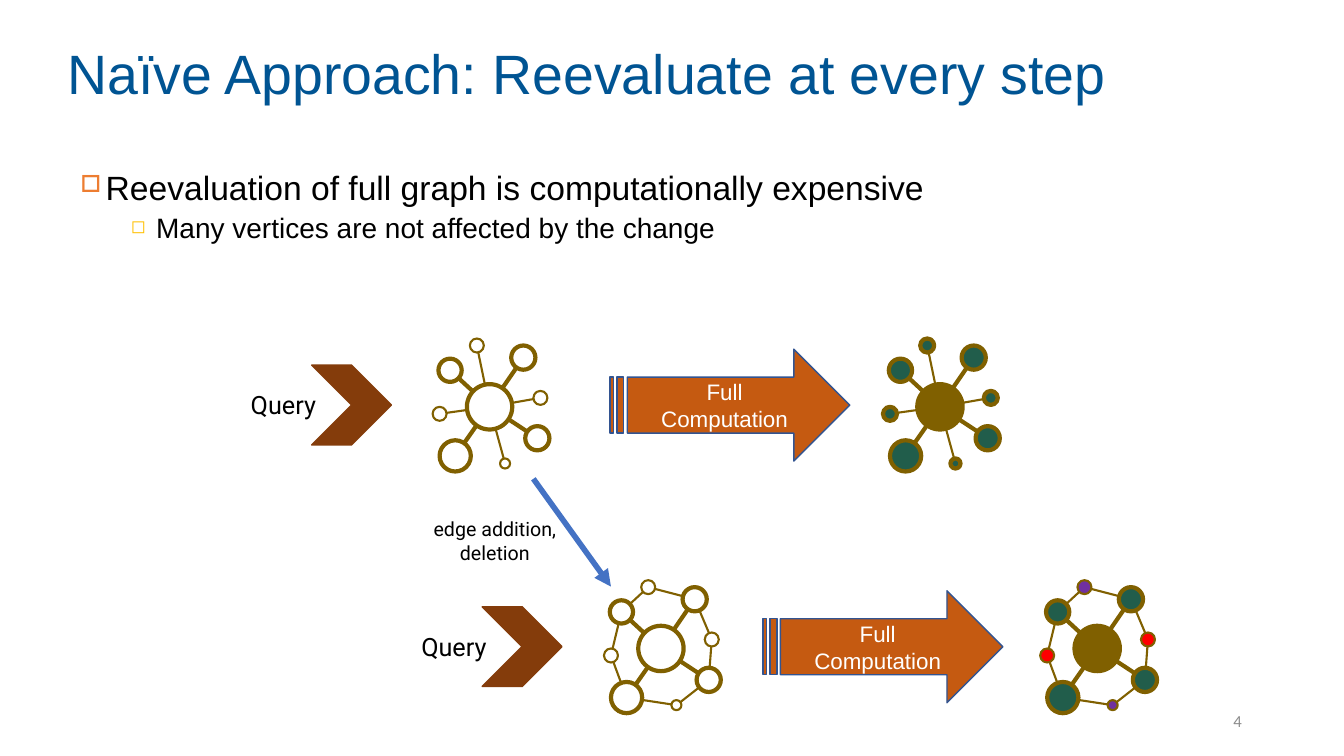
from lxml.etree import SubElement
from pptx import Presentation
from pptx.dml.color import RGBColor
from pptx.enum.shapes import MSO_CONNECTOR, MSO_SHAPE
from pptx.enum.text import MSO_ANCHOR, MSO_AUTO_SIZE, PP_ALIGN
from pptx.oxml.ns import qn
from pptx.util import Pt

NAVY = RGBColor(0x00, 0x54, 0x93)
BLACK = RGBColor(0x00, 0x00, 0x00)
WHITE = RGBColor(0xFF, 0xFF, 0xFF)
GRAY = RGBColor(0x8C, 0x8C, 0x8C)
OLIVE = RGBColor(0x80, 0x60, 0x00)
GREEN = RGBColor(0x21, 0x5D, 0x4B)
PURPLE = RGBColor(0x70, 0x30, 0xA0)
RED = RGBColor(0xFF, 0x00, 0x00)
RUST = RGBColor(0xC5, 0x5A, 0x11)
BROWN = RGBColor(0x84, 0x3C, 0x0B)
STEEL = RGBColor(0x32, 0x54, 0x91)
BLUE = RGBColor(0x44, 0x72, 0xC4)
ORANGE = RGBColor(0xED, 0x7D, 0x31)
GOLD = RGBColor(0xFF, 0xC0, 0x00)

THIN, THICK = 1.5, 3
# Node name: left, top and diameter within a graph's box, in points
NODES = {
    "hub": (24.5, 32.6, 32.4),
    "se": (66.2, 62.6, 17.3),
    "n": (26.6, 0, 10),
    "nw": (4.2, 14.4, 16.6),
    "ne": (56.2, 5, 17.3),
    "sw": (5, 72.7, 22.3),
    "w": (0, 48.8, 10),
    "e": (72, 37.4, 10),
    "s": (48.2, 85.7, 7.2),
}
LARGE = ("nw", "ne", "se", "sw")
RING = ("n", "ne", "e", "se", "s", "sw", "w", "nw")
STAR = [("hub", name) for name in RING]
WHEEL = list(zip(RING, RING[1:] + RING[:1])) + [("hub", name) for name in LARGE]

BLANK = dict.fromkeys(NODES, WHITE)
DONE = dict.fromkeys(NODES, GREEN) | {"hub": OLIVE}
MIXED = DONE | {"n": PURPLE, "s": PURPLE, "w": RED, "e": RED}


def style(item, **values):
    for name, value in values.items():
        setattr(item, name, value)


def write(frame, lines, font, size, color, align=PP_ALIGN.LEFT, **values):
    style(frame, auto_size=MSO_AUTO_SIZE.NONE, **values)
    for i, line in enumerate(lines):
        para = frame.paragraphs[0] if i == 0 else frame.add_paragraph()
        para.alignment = align
        run = para.add_run()
        run.text = line
        style(run.font, name=font, size=Pt(size))
        run.font.color.rgb = color


def add_box(parent, x, y, w, h):
    return parent.shapes.add_textbox(Pt(x), Pt(y), Pt(w), Pt(h)).text_frame


def add_form(parent, kind, x, y, w, h, fill, color, width):
    form = parent.shapes.add_shape(kind, Pt(x), Pt(y), Pt(w), Pt(h))
    form.shadow.inherit = False
    form.fill.solid()
    form.fill.fore_color.rgb = fill
    form.line.color.rgb = color
    form.line.width = Pt(width)
    return form


def add_line(parent, start, end, color, width):
    ends = [Pt(v) for v in (*start, *end)]
    line = parent.shapes.add_connector(MSO_CONNECTOR.STRAIGHT, *ends)
    line.line.color.rgb = color
    line.line.width = Pt(width)
    SubElement(line._element.spPr, qn("a:effectLst"))
    return line


def add_title(slide, x, y, w, h):
    title = slide.shapes.title
    style(title, left=Pt(x), top=Pt(y), width=Pt(w), height=Pt(h))
    write(title.text_frame, ["Naïve Approach: Reevaluate at every step"],
          "Arial", 39.6, NAVY, vertical_anchor=MSO_ANCHOR.MIDDLE)
    title.text_frame.paragraphs[0].line_spacing = 0.9


def add_bullets(slide, x, y, w, h):
    rows = [
        ("Reevaluation of full graph is computationally expensive", 24, 18, 10, "□", ORANGE, 70),
        ("Many vertices are not affected by the change", 20, 54, 5, "◻", GOLD, 65),
    ]
    frame = add_box(slide, x, y, w, h)
    write(frame, [row[0] for row in rows], "Arial", 24, BLACK, word_wrap=True)
    for level, (para, row) in enumerate(zip(frame.paragraphs, rows)):
        _, size, indent, gap, mark, color, scale = row
        para.runs[0].font.size = Pt(size)
        style(para, level=level, line_spacing=0.9, space_before=Pt(gap))
        props = para._p.get_or_add_pPr()
        props.set("marL", str(Pt(indent)))
        props.set("indent", str(-Pt(18)))
        tint = SubElement(props, qn("a:buClr"))
        SubElement(tint, qn("a:srgbClr"), val=str(color))
        SubElement(props, qn("a:buSzPct"), val=str(scale * 1000))
        SubElement(props, qn("a:buChar"), char=mark)


def add_graph(slide, x, y, edges, fills, small=THIN):
    """Draw edges centre to centre, then the nodes on top of them."""
    group = slide.shapes.add_group_shape()
    mid = {name: (x + dx + d / 2, y + dy + d / 2) for name, (dx, dy, d) in NODES.items()}
    for start, end in edges:
        width = THICK if start == "hub" and end in LARGE else THIN
        add_line(group, mid[start], mid[end], OLIVE, width)
    for name, (dx, dy, d) in NODES.items():
        width = THICK if name == "hub" or name in LARGE else small
        add_form(group, MSO_SHAPE.OVAL, x + dx, y + dy, d, d, fills[name], OLIVE, width)


def add_query(slide, x, y):
    group = slide.shapes.add_group_shape()
    add_form(group, MSO_SHAPE.CHEVRON, x + 50.6, y, 57, 57, BROWN, BROWN, 1)
    write(add_box(group, x, y + 14, 63.4, 29), ["Query"], "Roboto", 18, BLACK, word_wrap=False)


def add_step(slide, x, y):
    arrow = add_form(slide, MSO_SHAPE.STRIPED_RIGHT_ARROW, x, y, 171.4, 80, RUST, STEEL, 1)
    write(arrow.text_frame, ["Full", "Computation"], "Arial", 16, WHITE, PP_ALIGN.CENTER,
          vertical_anchor=MSO_ANCHOR.MIDDLE, word_wrap=True)


def add_change(slide, x, y):
    line = add_line(slide, (x + 80, y), (x + 135.4, y + 77), BLUE, 4)
    SubElement(line.line._get_or_add_ln(), qn("a:tailEnd"), type="triangle")
    write(add_box(slide, x, y + 23.8, 105, 41), ["edge addition,", "deletion"],
          "Roboto", 14, BLACK, PP_ALIGN.CENTER, word_wrap=False)


def add_row(slide, y, query, before, step, after, edges, fills, small):
    """Lay out query, graph, computation and result from left to right."""
    add_graph(slide, before, y, edges, BLANK)
    add_graph(slide, after, y, edges, fills, small)
    add_step(slide, step, y + 7.6)
    add_query(slide, query, y + 19)


def main():
    deck = Presentation()
    style(deck, slide_width=Pt(960), slide_height=Pt(540))
    slide = deck.slides.add_slide(deck.slide_layouts[5])
    add_title(slide, 41, 31.7, 874, 46)
    add_bullets(slide, 50.4, 118.8, 834.5, 165.6)
    add_row(slide, 241.8, 172, 309, 435.6, 630.7, STAR, DONE, THICK)
    add_row(slide, 414.4, 293.8, 431.4, 545, 743, WHEEL, MIXED, THIN)
    add_change(slide, 301, 342)
    write(add_box(slide, 678.2, 500.4, 216, 28.8), ["4"], "Calibri", 12, GRAY,
          PP_ALIGN.RIGHT, vertical_anchor=MSO_ANCHOR.MIDDLE, word_wrap=True)
    deck.save("out.pptx")


if __name__ == "__main__":
    main()
